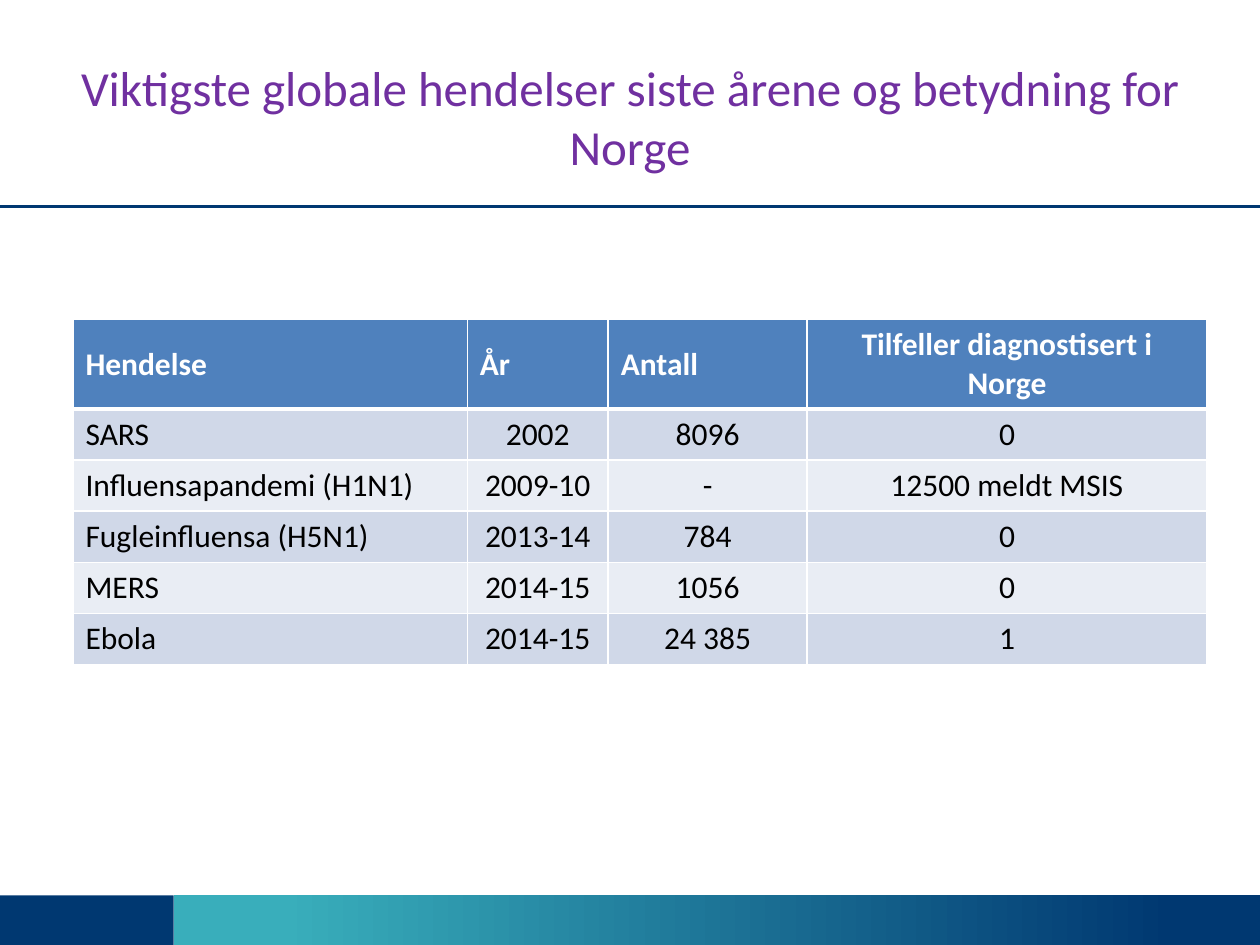
"""Build a slide with a table of global outbreaks and their impact on Norway."""
from lxml import etree
from pptx import Presentation
from pptx.dml.color import RGBColor
from pptx.enum.shapes import MSO_CONNECTOR, MSO_SHAPE
from pptx.enum.text import MSO_ANCHOR, PP_ALIGN
from pptx.oxml.ns import qn
from pptx.util import Cm, Pt

LEFT, CENTER = PP_ALIGN.LEFT, PP_ALIGN.CENTER
TOP, MIDDLE = MSO_ANCHOR.TOP, MSO_ANCHOR.MIDDLE
RECTANGLE, STRAIGHT = MSO_SHAPE.RECTANGLE, MSO_CONNECTOR.STRAIGHT

NAVY = RGBColor(0x00, 0x38, 0x71)
TEAL = RGBColor(0x39, 0xAE, 0xBB)
PURPLE = RGBColor(0x70, 0x30, 0xA0)
WHITE = RGBColor(0xFF, 0xFF, 0xFF)
BLACK = RGBColor(0x00, 0x00, 0x00)
HEADER_BLUE = RGBColor(0x4F, 0x81, 0xBD)
BANDS = (RGBColor(0xD0, 0xD8, 0xE8), RGBColor(0xE9, 0xED, 0xF4))
FONT = "Calibri"

TITLE = "Viktigste globale hendelser siste årene og betydning for Norge"
HEADER = ("Hendelse", "År", "Antall", "Tilfeller diagnostisert i Norge")
EVENTS = [
    ("SARS", "2002", "8096", "0"),
    ("Influensapandemi (H1N1)", "2009-10", "-", "12500 meldt MSIS"),
    ("Fugleinfluensa (H5N1)", "2013-14", "784", "0"),
    ("MERS", "2014-15", "1056", "0"),
    ("Ebola", "2014-15", "24 385", "1"),
]
HEADER_ALIGN = (LEFT, LEFT, LEFT, CENTER)
EVENT_ALIGN = (LEFT, CENTER, CENTER, CENTER)
COLUMN_WIDTHS = (7.95, 2.84, 4.01, 8.06)
HEADER_HEIGHT, EVENT_HEIGHT = 1.75, 1.03

SLIDE_WIDTH, SLIDE_HEIGHT = 25.4, 19.05
FOOTER_TOP, FOOTER_SPLIT = 18.05, 3.5
RULE_TOP = 4.16


def write(frame, text, size, color, align, bold=False):
    paragraph = frame.paragraphs[0]
    paragraph.alignment = align
    run = paragraph.add_run()
    run.text = text
    run.font.name = FONT
    run.font.size = Pt(size)
    run.font.bold = bold
    run.font.color.rgb = color


def add_footer_bar(slide, left, right):
    bar = slide.shapes.add_shape(
        RECTANGLE, Cm(left), Cm(FOOTER_TOP),
        Cm(right - left), Cm(SLIDE_HEIGHT - FOOTER_TOP))
    bar.shadow.inherit = False
    bar.line.fill.background()
    return bar


def add_footer(slide):
    fade = add_footer_bar(slide, FOOTER_SPLIT, SLIDE_WIDTH).fill
    fade.gradient()
    fade.gradient_angle = 0
    for stop, color, position in zip(fade.gradient_stops, (TEAL, NAVY), (0.1, 0.92)):
        stop.color.rgb = color
        stop.position = position
    corner = add_footer_bar(slide, 0, FOOTER_SPLIT)
    corner.fill.solid()
    corner.fill.fore_color.rgb = NAVY


def add_rule(slide):
    rule = slide.shapes.add_connector(
        STRAIGHT, Cm(0), Cm(RULE_TOP), Cm(SLIDE_WIDTH), Cm(RULE_TOP))
    rule.line.color.rgb = NAVY
    rule.line.width = Pt(2)
    etree.SubElement(rule._element.spPr, qn("a:effectLst"))


def add_borders(cell, top, bottom):
    properties = cell._tc.get_or_add_tcPr()
    for side, points in (("L", 1), ("R", 1), ("T", top), ("B", bottom)):
        border = etree.SubElement(properties, qn(f"a:ln{side}"), w=str(Pt(points)))
        fill = etree.SubElement(border, qn("a:solidFill"))
        etree.SubElement(fill, qn("a:srgbClr"), val=str(WHITE))


def add_events_table(slide):
    rows = [HEADER, *EVENTS]
    heights = [HEADER_HEIGHT] + [EVENT_HEIGHT] * len(EVENTS)
    table = slide.shapes.add_table(
        len(rows), len(HEADER), Cm(1.47), Cm(6.44),
        Cm(sum(COLUMN_WIDTHS)), Cm(sum(heights))).table
    for column, width in zip(table.columns, COLUMN_WIDTHS):
        column.width = Cm(width)
    for r, (texts, height) in enumerate(zip(rows, heights)):
        table.rows[r].height = Cm(height)
        is_header = r == 0
        aligns = HEADER_ALIGN if is_header else EVENT_ALIGN
        for c, (text, align) in enumerate(zip(texts, aligns)):
            cell = table.cell(r, c)
            add_borders(cell, 3 if r == 1 else 1, 3 if is_header else 1)
            cell.fill.solid()
            cell.fill.fore_color.rgb = HEADER_BLUE if is_header else BANDS[(r - 1) % 2]
            cell.vertical_anchor = MIDDLE if is_header else TOP
            write(cell.text_frame, text, 18, WHITE if is_header else BLACK,
                  align, is_header)


def main():
    presentation = Presentation()
    presentation.slide_width = Cm(SLIDE_WIDTH)
    presentation.slide_height = Cm(SLIDE_HEIGHT)
    slide = presentation.slides.add_slide(presentation.slide_layouts[5])
    add_footer(slide)
    add_rule(slide)
    title = slide.shapes.title
    title.left, title.top, title.width, title.height = (
        Cm(1.27), Cm(0.76), Cm(22.86), Cm(3.18))
    title.text_frame.vertical_anchor = MIDDLE
    write(title.text_frame, TITLE, 28, PURPLE, CENTER)
    add_events_table(slide)
    presentation.save("out.pptx")


if __name__ == "__main__":
    main()
